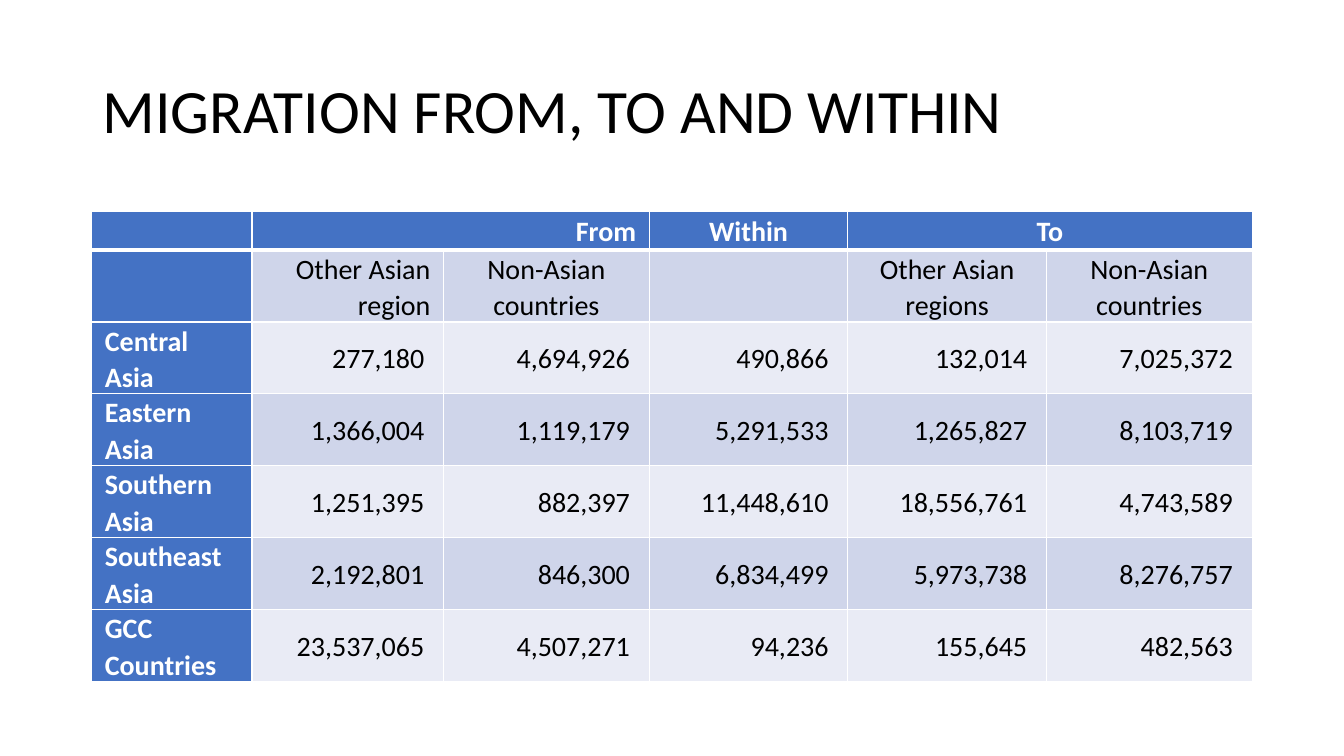
from lxml.etree import SubElement
from pptx import Presentation
from pptx.dml.color import RGBColor
from pptx.enum.text import MSO_ANCHOR as Anchor, PP_ALIGN as Align
from pptx.oxml.ns import qn
from pptx.util import Inches, Pt

FONT = "Calibri"
WHITE = RGBColor(0xFF, 0xFF, 0xFF)
BLACK = RGBColor(0x00, 0x00, 0x00)
BLUE = RGBColor(0x44, 0x72, 0xC4)
BAND_DARK = RGBColor(0xCF, 0xD5, 0xEA)
BAND_LIGHT = RGBColor(0xE9, 0xEB, 0xF5)

COLUMN_WIDTHS = [1.59, 1.9, 2.04, 1.97, 1.97, 2.04]
ROW_HEIGHTS = [0.38] + [0.7] * 6
MIGRATION = [
    ["", "From", "", "Within", "To", ""],
    ["", "Other Asian region", "Non-Asian countries", "",
     "Other Asian regions", "Non-Asian countries"],
    ["Central Asia", "277,180", "4,694,926", "490,866", "132,014", "7,025,372"],
    ["Eastern Asia", "1,366,004", "1,119,179", "5,291,533", "1,265,827", "8,103,719"],
    ["Southern Asia", "1,251,395", "882,397", "11,448,610", "18,556,761", "4,743,589"],
    ["Southeast Asia", "2,192,801", "846,300", "6,834,499", "5,973,738", "8,276,757"],
    ["GCC Countries", "23,537,065", "4,507,271", "94,236", "155,645", "482,563"],
]


def style_paragraph(paragraph, size, color, bold, align, spacing):
    paragraph.alignment = align
    paragraph.line_spacing = spacing
    font = paragraph.font
    font.name, font.size, font.bold = FONT, Pt(size), bold
    font.color.rgb = color


def add_title(slide, text):
    title = slide.shapes.add_textbox(Inches(0.92), Inches(0.4), Inches(11.5), Inches(1.45))
    frame = title.text_frame
    frame.word_wrap = True
    frame.vertical_anchor = Anchor.MIDDLE
    frame.text = text
    style_paragraph(frame.paragraphs[0], 44, BLACK, False, Align.LEFT, 0.9)


def set_borders(cell, bottom_width, top_width):
    """Draw white cell borders; they must precede the fill in the XML."""
    properties = cell._tc.get_or_add_tcPr()
    for side, width in (("L", 1), ("R", 1), ("T", top_width), ("B", bottom_width)):
        line = SubElement(properties, qn(f"a:ln{side}"), w=str(Pt(width)))
        fill = SubElement(line, qn("a:solidFill"))
        SubElement(fill, qn("a:srgbClr"), val=str(WHITE))


def cell_align(row, column):
    """Numbers and the first 'From' column go right, other headings centre."""
    if column == 0:
        return Align.LEFT
    return Align.RIGHT if row > 1 or column == 1 else Align.CENTER


def fill_cell(cell, row, column, text):
    heading = row == 0 or column == 0
    number = row > 1 and column > 0
    set_borders(cell, 3 if row == 0 else 1, 3 if row == 1 else 1)
    cell.fill.solid()
    band = BAND_DARK if row % 2 else BAND_LIGHT
    cell.fill.fore_color.rgb = BLUE if heading else band
    cell.vertical_anchor = Anchor.MIDDLE
    cell.margin_left = Inches(0.13)
    cell.margin_right = Inches(0.19 if number else 0.13)
    cell.margin_top = cell.margin_bottom = 0
    cell.text = text
    style_paragraph(cell.text_frame.paragraphs[0], 20, WHITE if heading else BLACK,
                    heading, cell_align(row, column), 1.07)


def add_migration_table(slide):
    table = slide.shapes.add_table(
        len(ROW_HEIGHTS), len(COLUMN_WIDTHS), Inches(0.91), Inches(2.1),
        Inches(sum(COLUMN_WIDTHS)), Inches(sum(ROW_HEIGHTS))).table
    table.first_col = True
    for column, width in zip(table.columns, COLUMN_WIDTHS):
        column.width = Inches(width)
    for row, height in zip(table.rows, ROW_HEIGHTS):
        row.height = Inches(height)
    for r, texts in enumerate(MIGRATION):
        for c, text in enumerate(texts):
            fill_cell(table.cell(r, c), r, c, text)
    # "From" and "To" each span two columns
    for first in (1, 4):
        table.cell(0, first).merge(table.cell(0, first + 1))


def main():
    deck = Presentation()
    deck.slide_width, deck.slide_height = Inches(13.33), Inches(7.5)
    slide = deck.slides.add_slide(deck.slide_layouts[6])
    add_title(slide, "MIGRATION FROM, TO AND WITHIN")
    add_migration_table(slide)
    deck.save("out.pptx")


if __name__ == "__main__":
    main()
